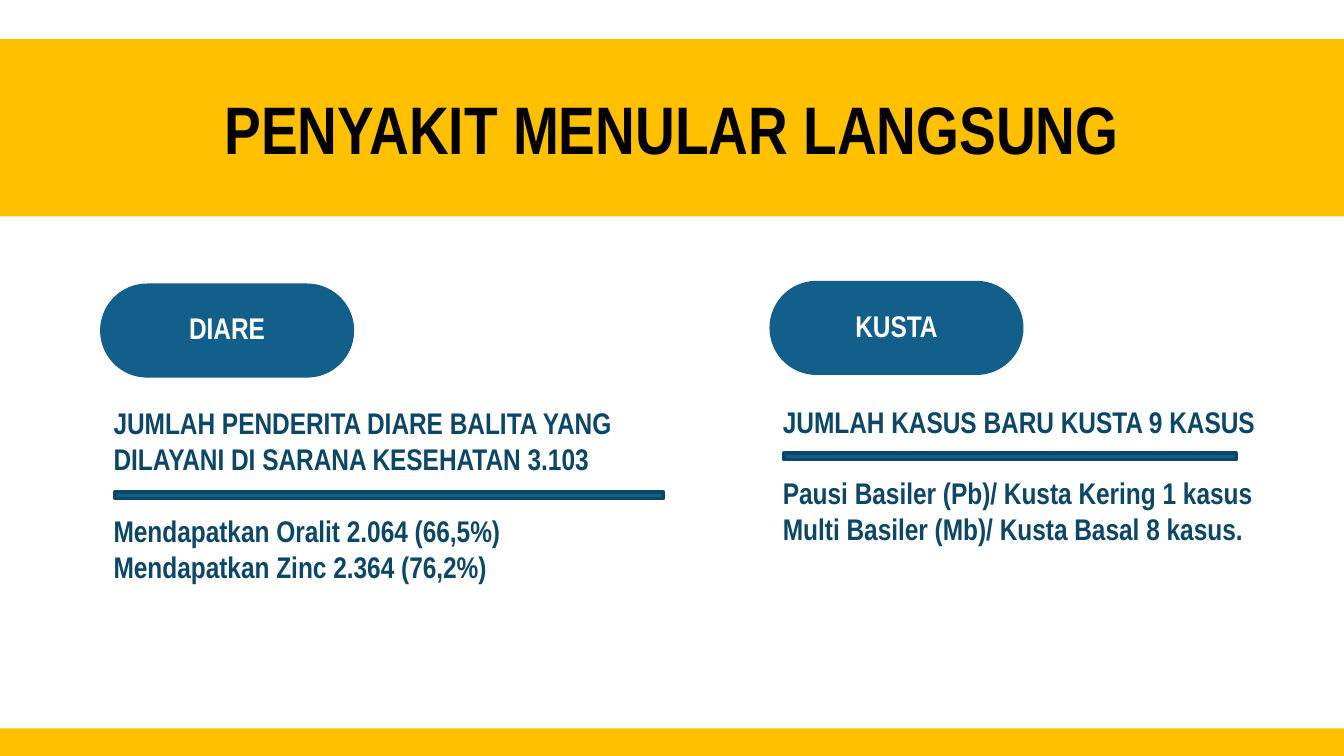
from dataclasses import dataclass

from lxml.etree import SubElement
from pptx import Presentation
from pptx.dml.color import RGBColor
from pptx.enum.shapes import MSO_SHAPE
from pptx.enum.text import MSO_ANCHOR, MSO_AUTO_SIZE, PP_ALIGN
from pptx.oxml.ns import qn
from pptx.util import Emu, Pt


@dataclass(frozen=True)
class Theme:
    font: str = "Arial Narrow"
    band: str = "FFC000"
    accent: str = "115F8A"
    edge: str = "0D4666"
    body: str = "0D4767"
    title: str = "000000"
    label: str = "FFFFFF"
    title_size: int = 36
    text_size: int = 16
    detail_gap: float = 19.2
    edge_width: int = 2


@dataclass(frozen=True)
class Box:
    left: int
    top: int
    width: int
    height: int

    def inner(self, left, top, width, height):
        return Box(self.left + left, self.top + top, width, height)


@dataclass(frozen=True)
class Disease:
    name: str
    total: str
    details: tuple
    box: Box
    text_top: int
    rule_top: int
    rule_width: int


THEME = Theme()
EMU_PER_PX = 4572
PAGE = Box(0, 0, 2000, 1125)
INSET = 20

DISEASES = (
    Disease(
        "DIARE",
        "JUMLAH PENDERITA DIARE BALITA YANG DILAYANI DI SARANA KESEHATAN 3.103",
        ("Mendapatkan Oralit 2.064 (66,5%)", "Mendapatkan Zinc 2.364 (76,2%)"),
        Box(149, 422, 892, 352), 276, 310, 816,
    ),
    Disease(
        "KUSTA",
        "JUMLAH KASUS BARU KUSTA 9 KASUS",
        ("Pausi Basiler (Pb)/ Kusta Kering 1 kasus",
         "Multi Basiler (Mb)/ Kusta Basal 8 kasus."),
        Box(1145, 418, 752, 326), 251, 256, 672,
    ),
)


def px(length):
    return Emu(length * EMU_PER_PX)


def paint(shape, color):
    shape.fill.solid()
    shape.fill.fore_color.rgb = RGBColor.from_string(color)


def place(shape, box):
    shape.left, shape.top = px(box.left), px(box.top)
    shape.width, shape.height = px(box.width), px(box.height)


def add_block(page, kind, box, color):
    block = page.shapes.add_shape(
        kind, px(box.left), px(box.top), px(box.width), px(box.height))
    block.shadow.inherit = False
    block.line.fill.background()
    paint(block, color)
    return block


def prepare_text(shape, bottom_inset=INSET):
    frame = shape.text_frame
    frame.word_wrap = True
    frame.auto_size = MSO_AUTO_SIZE.NONE
    frame.vertical_anchor = MSO_ANCHOR.MIDDLE
    frame.margin_left = frame.margin_top = frame.margin_right = px(INSET)
    frame.margin_bottom = px(bottom_inset)
    return frame


def write(para, text, size, color, align, space_before=0):
    para.alignment = align
    para.space_before = Pt(space_before)
    span = para.add_run()
    span.text = text
    span.font.name = THEME.font
    span.font.size = Pt(size)
    span.font.bold = True
    span.font.color.rgb = RGBColor.from_string(color)


def remove_bullet(para):
    properties = para._p.get_or_add_pPr()
    properties.set("marL", "0")
    properties.set("indent", "0")
    SubElement(properties, qn("a:buNone"))


def build_header(page, box):
    title = page.shapes.title
    place(title, box)
    paint(title, THEME.band)
    write(prepare_text(title).paragraphs[0], "PENYAKIT MENULAR LANGSUNG",
          THEME.title_size, THEME.title, PP_ALIGN.CENTER)


def build_footer(page, box):
    add_block(page, MSO_SHAPE.RECTANGLE, box, THEME.band)


def build_disease(page, body, disease):
    box = disease.box
    pill = add_block(page, MSO_SHAPE.ROUNDED_RECTANGLE,
                     box.inner(0, 0, 378, 140), THEME.accent)
    pill.adjustments[0] = 0.5
    write(prepare_text(pill, INSET + 8).paragraphs[0], disease.name,
          THEME.text_size, THEME.label, PP_ALIGN.CENTER)

    place(body, box.inner(0, disease.text_top, box.width, 76))
    frame = prepare_text(body)
    for index, text in enumerate((disease.total, *disease.details)):
        para = frame.add_paragraph() if index else frame.paragraphs[0]
        write(para, text, THEME.text_size, THEME.body, PP_ALIGN.LEFT,
              THEME.detail_gap if index == 1 else 0)
        remove_bullet(para)

    rule = add_block(page, MSO_SHAPE.RECTANGLE,
                     box.inner(22, disease.rule_top, disease.rule_width, 10),
                     THEME.accent)
    rule.line.color.rgb = RGBColor.from_string(THEME.edge)
    rule.line.width = Pt(THEME.edge_width)


def main():
    deck = Presentation()
    deck.slide_width, deck.slide_height = px(PAGE.width), px(PAGE.height)
    page = deck.slides.add_slide(deck.slide_layouts.get_by_name("Two Content"))
    build_header(page, PAGE.inner(0, 58, PAGE.width, 264))
    for body_index, disease in enumerate(DISEASES, start=1):
        build_disease(page, page.placeholders[body_index], disease)
    build_footer(page, PAGE.inner(0, 1084, PAGE.width, 41))
    deck.save("out.pptx")


if __name__ == "__main__":
    main()
